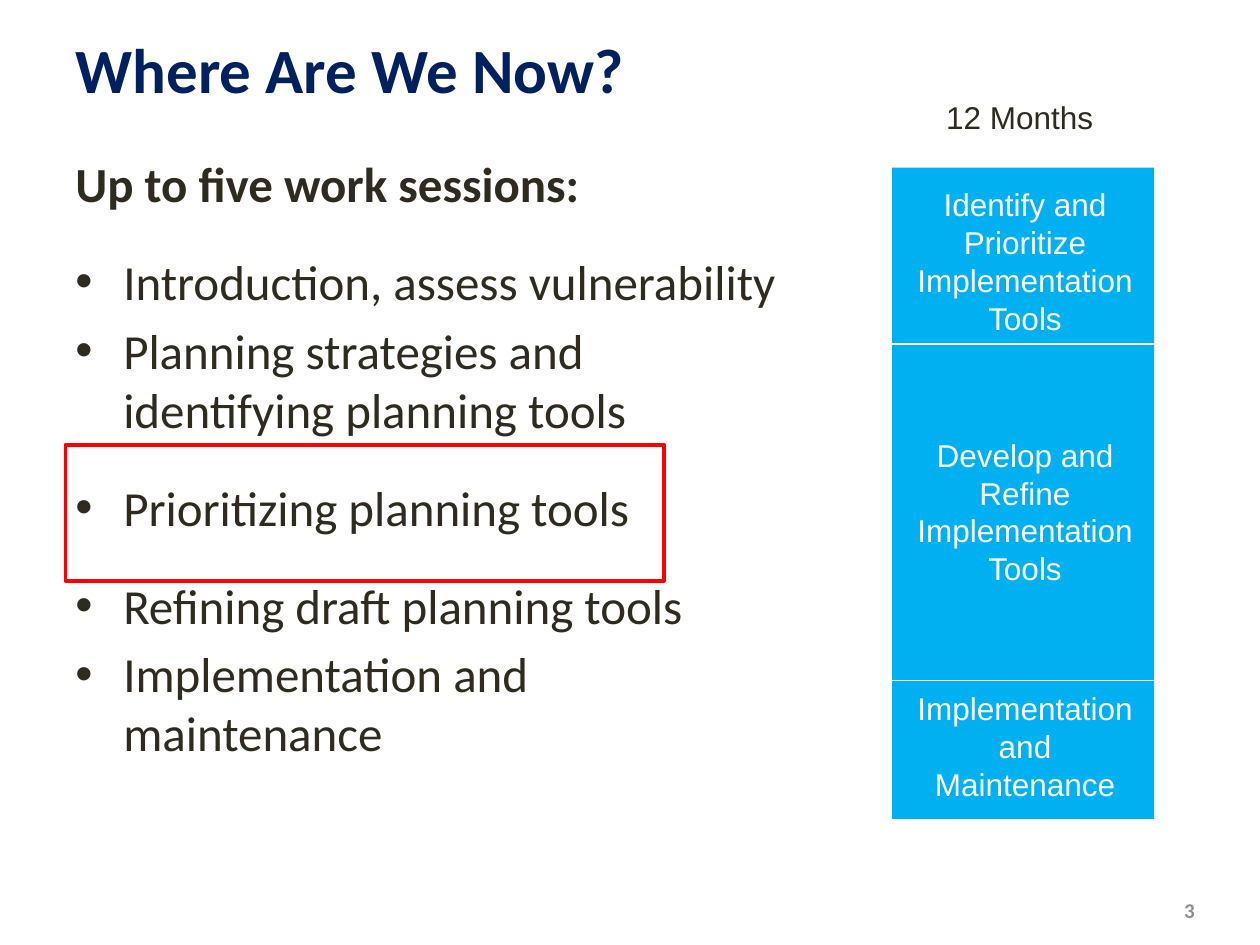
from lxml.etree import SubElement
from pptx import Presentation
from pptx.dml.color import RGBColor
from pptx.enum.shapes import MSO_CONNECTOR, MSO_SHAPE
from pptx.enum.text import MSO_ANCHOR, MSO_AUTO_SIZE, PP_ALIGN
from pptx.oxml.ns import qn
from pptx.util import Inches, Pt

INK, WHITE, NAVY = "2F2B20", "FFFFFF", "002060"
SKY, RED, GRAY = "00B0F0", "FF0000", "8F8F8D"

SESSIONS = [
    ("Introduction, assess vulnerability", 1.5),
    ("Planning strategies and identifying planning tools", 1),
    ("Prioritizing planning tools", 1.5),
    ("Refining draft planning tools", 1.5),
    ("Implementation and maintenance", 1),
]
PHASES = [
    ("Identify and Prioritize Implementation Tools", 1.42, 1.31),
    ("Develop and Refine Implementation Tools", 3.41, 1.31),
    ("Implementation and Maintenance", 5.42, 1.01),
]
DIVIDERS = [(7.08, 2.73), (7.03, 5.4)]


def color(value):
    """Turn a hex string into a colour."""
    return RGBColor.from_string(value)


def add_span(para, text, size, font, ink, bold=False):
    """Add one formatted run to a paragraph."""
    span = para.add_run()
    span.text = text
    span.font.size = Pt(size)
    span.font.name = font
    span.font.bold = bold
    span.font.color.rgb = color(ink)


def add_title(page, text):
    """Place and fill the title placeholder."""
    title = page.shapes.title
    title.left, title.top = Inches(0.5), Inches(0.08)
    title.width, title.height = Inches(9), Inches(0.92)
    frame = title.text_frame
    frame.auto_size = MSO_AUTO_SIZE.NONE
    frame.vertical_anchor = MSO_ANCHOR.MIDDLE
    para = frame.paragraphs[0]
    para.alignment = PP_ALIGN.LEFT
    add_span(para, text, 36, "Calibri", NAVY, True)


def add_box(page, left, top, width, height, wrap=True):
    """Add an empty text box and return its text frame."""
    box = page.shapes.add_textbox(Inches(left), Inches(top), Inches(width), Inches(height))
    box.text_frame.word_wrap = wrap
    return box.text_frame


def add_bullet(para):
    """Give a paragraph a hanging bullet."""
    properties = para._p.get_or_add_pPr()
    properties.set("marL", str(Inches(0.38)))
    properties.set("indent", str(-Inches(0.38)))
    SubElement(properties, qn("a:buFont"), typeface="Arial")
    SubElement(properties, qn("a:buChar"), char="•")


def add_sessions(page):
    """Add the heading and the bulleted work sessions."""
    frame = add_box(page, 0.5, 1.17, 5.92, 5.53)
    heading = frame.paragraphs[0]
    heading.space_before = Pt(5.6)
    add_span(heading, "Up to five work sessions:", 28, "Calibri", INK, True)
    for text, spacing in SESSIONS:
        para = frame.add_paragraph()
        para.line_spacing = float(spacing)
        para.space_before = Pt(5.6)
        add_bullet(para)
        add_span(para, text, 28, "Calibri", INK)


def add_rectangle(page, left, top, width, height, fill=None, line=None):
    """Add a rectangle with an optional fill and outline."""
    shape = page.shapes.add_shape(
        MSO_SHAPE.RECTANGLE, Inches(left), Inches(top), Inches(width), Inches(height))
    shape.shadow.inherit = False
    if fill:
        shape.fill.solid()
        shape.fill.fore_color.rgb = color(fill)
    else:
        shape.fill.background()
    if line:
        shape.line.color.rgb = color(line)
        shape.line.width = Pt(2)
    else:
        shape.line.fill.background()


def add_divider(page, left, top):
    """Add a white line across the timeline bar."""
    line = page.shapes.add_connector(
        MSO_CONNECTOR.STRAIGHT, Inches(left), Inches(top), Inches(9.17), Inches(top))
    line.line.color.rgb = color(WHITE)
    line.line.width = Pt(0.75)
    SubElement(line._element.spPr, qn("a:effectLst"))


def add_timeline(page):
    """Add the twelve-month bar with its phases."""
    add_rectangle(page, 7.08, 1.33, 2.08, 5.17, fill=SKY)
    caption = add_box(page, 7.41, 0.73, 1.38, 0.4, wrap=False)
    add_span(caption.paragraphs[0], "12 Months", 18, "Arial", INK)
    for text, top, height in PHASES:
        para = add_box(page, 7.08, top, 2.11, height).paragraphs[0]
        para.alignment = PP_ALIGN.CENTER
        add_span(para, text, 18, "Arial", WHITE)
    for left, top in DIVIDERS:
        add_divider(page, left, top)


def add_page_number(page, number):
    """Add the page number at the lower right."""
    frame = add_box(page, 7.25, 7.02, 2.33, 0.4)
    frame.vertical_anchor = MSO_ANCHOR.MIDDLE
    para = frame.paragraphs[0]
    para.alignment = PP_ALIGN.RIGHT
    add_span(para, number, 12, "Calibri", GRAY, True)


def main():
    """Build and save the slide."""
    deck = Presentation()
    deck.slide_width, deck.slide_height = Inches(10), Inches(7.5)
    page = deck.slides.add_slide(deck.slide_layouts[5])
    add_page_number(page, "3")
    add_title(page, "Where Are We Now?")
    add_sessions(page)
    add_timeline(page)
    add_rectangle(page, 0.52, 3.53, 4.75, 1.08, line=RED)
    deck.save("out.pptx")


if __name__ == "__main__":
    main()
